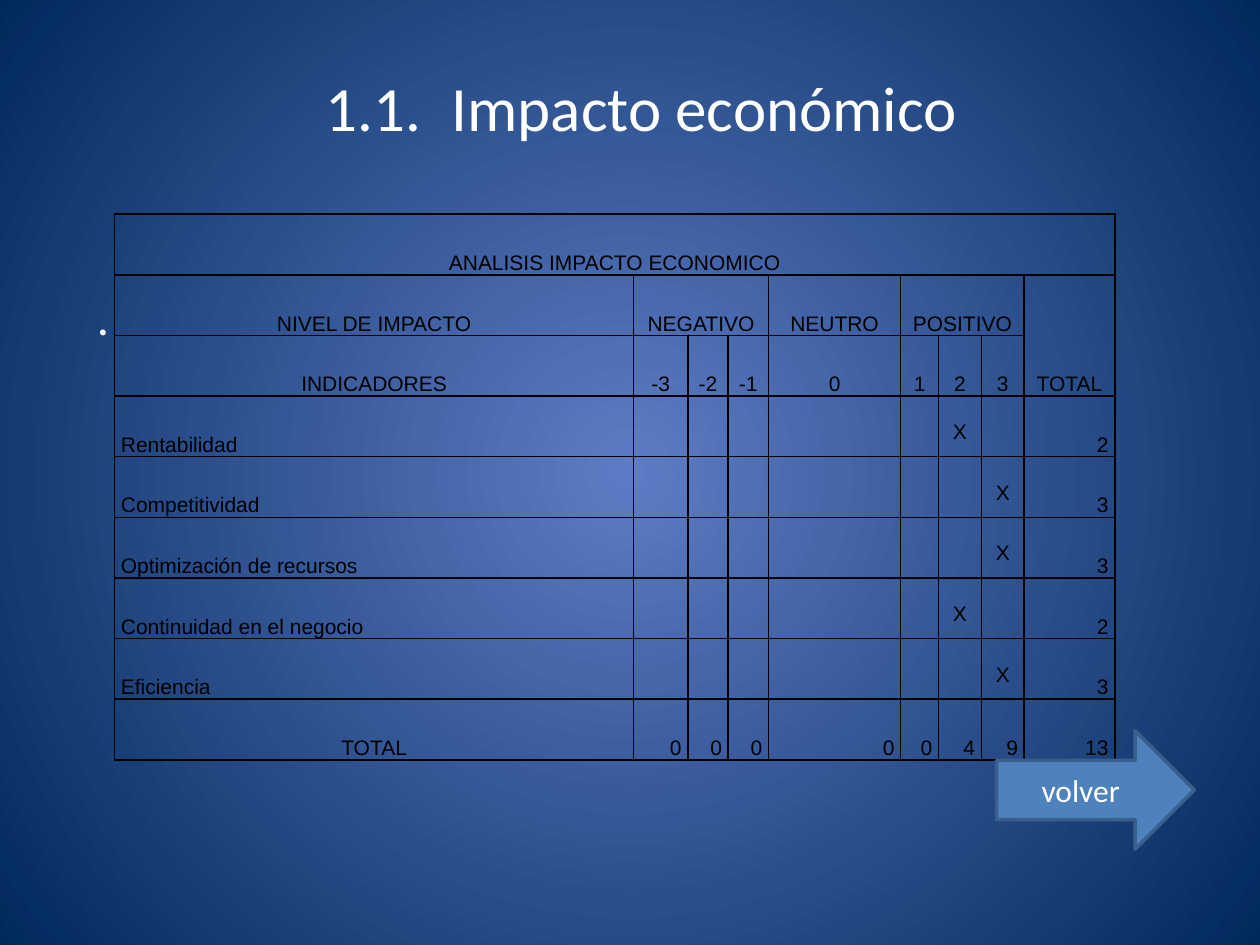
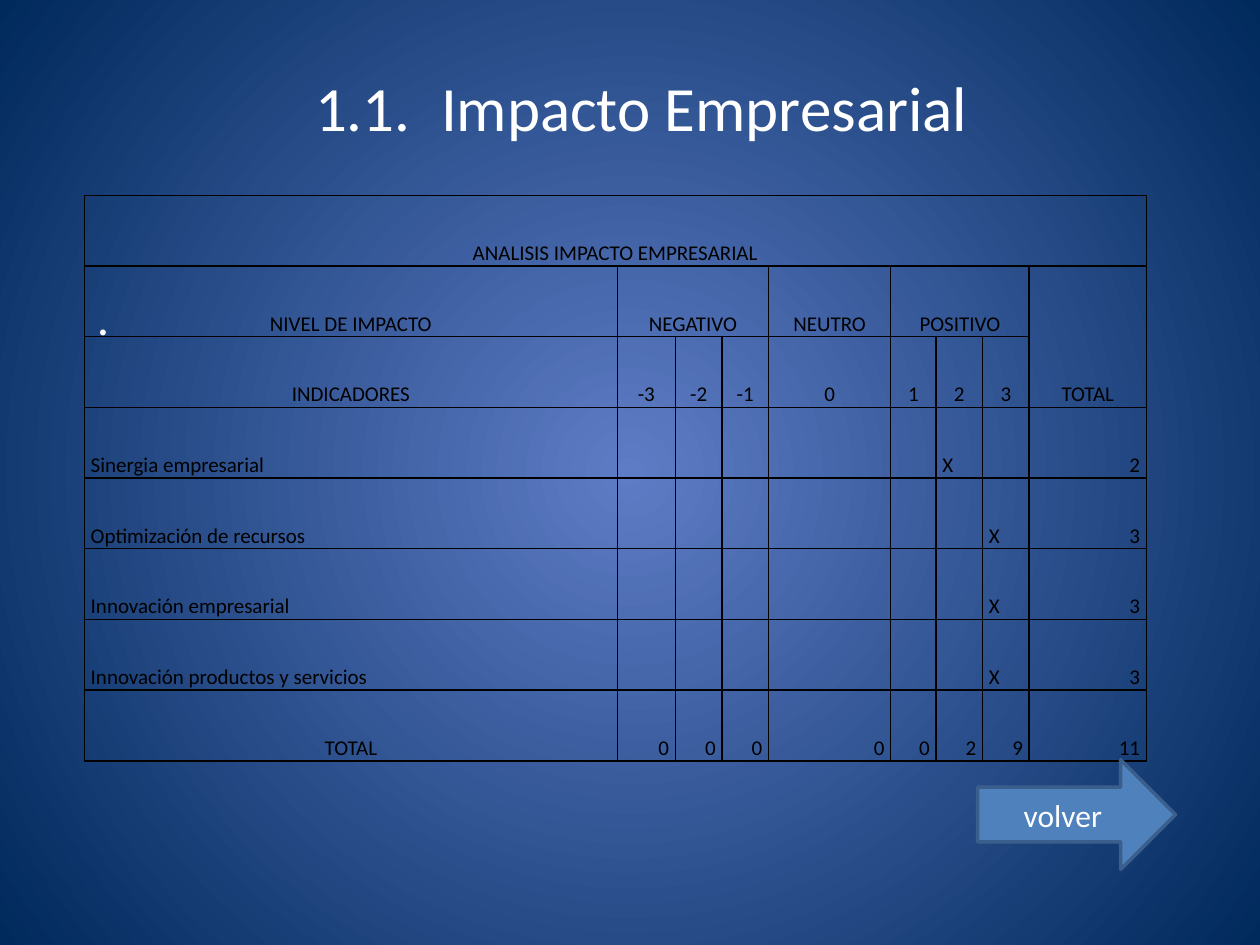
import pptx
import pptx.util
import pptx.dml.color
import pptx.enum.shapes
import pptx.enum.text
import pptx.oxml
import pptx.oxml.ns

Inches = pptx.util.Inches
Pt = pptx.util.Pt
RGBColor = pptx.dml.color.RGBColor
ALIGN = pptx.enum.text.PP_ALIGN
ANCHOR = pptx.enum.text.MSO_ANCHOR
qn = pptx.oxml.ns.qn
NS = pptx.oxml.ns.nsdecls("a")

WHITE = RGBColor(0xFF, 0xFF, 0xFF)
BLACK = RGBColor(0, 0, 0)
GLOW = RGBColor(0x5E, 0x7C, 0xC5)
NAVY = RGBColor(0x00, 0x29, 0x5C)
BLUE = RGBColor(0x4F, 0x81, 0xBD)
EDGE = RGBColor(0x3A, 0x5F, 0x8C)
LEVELS = [-3, -2, -1, 0, 1, 2, 3]


def write(frame, text, size, font, color, align):
    par = frame.paragraphs[0]
    par.text = text
    par.alignment = align
    par.font.size = Pt(size)
    par.font.name = font
    par.font.color.rgb = color
    return par


def style(cell, text, font, align, anchor):
    cell.margin_left = cell.margin_right = Inches(0.05)
    cell.margin_top = cell.margin_bottom = 0
    cell.vertical_anchor = anchor
    cell.fill.background()
    par = write(cell.text_frame, text, 12, font, BLACK, align)
    par.line_spacing = 1.5
    par.space_before = Pt(6)
    props = cell._tc.get_or_add_tcPr()
    for spot, side in enumerate(("lnL", "lnR", "lnT", "lnB")):
        props.insert(spot, pptx.oxml.parse_xml(
            f'<a:{side} {NS} w="12700"><a:solidFill>'
            f'<a:srgbClr val="{BLACK}"/></a:solidFill></a:{side}>'))


slides = [
    dict(title="1.1.\tImpacto económico", head="ANALISIS IMPACTO ECONOMICO",
         font="Arial", mark=(ALIGN.CENTER, ANCHOR.MIDDLE),
         table=(0.91, 1.7, 7.95, 4.33), arrow=(7.91, 5.8, 1.57, 0.94),
         cols=[4.12, 0.43, 0.32, 0.32, 1.05, 0.3, 0.34, 0.34, 0.72],
         scores=[("Rentabilidad", 2), ("Competitividad", 3),
                 ("Optimización de recursos", 3),
                 ("Continuidad en el negocio", 2), ("Eficiencia", 3)]),
    dict(title="1.1.\tImpacto Empresarial", head="ANALISIS IMPACTO EMPRESARIAL",
         font="Calibri", mark=(ALIGN.JUSTIFY, ANCHOR.BOTTOM),
         table=(0.67, 1.55, 8.43, 4.49), arrow=(7.76, 6.03, 1.57, 0.87),
         cols=[4.23, 0.46, 0.37, 0.37, 0.97, 0.36, 0.37, 0.37, 0.93],
         scores=[("Sinergia empresarial", 2), ("Optimización de recursos", 3),
                 ("Innovación empresarial", 3),
                 ("Innovación productos y servicios", 3)]),
]

prs = pptx.Presentation()
prs.slide_width = Inches(10)
prs.slide_height = Inches(7.5)

master = prs.slide_master
fill = master.background.fill
fill.gradient()
for stop, color, place in zip(fill.gradient_stops, (GLOW, NAVY), (0, 1)):
    stop.color.rgb = color
    stop.position = place
grad = master.element.find(".//" + qn("a:gradFill"))
grad.replace(grad.find(qn("a:lin")), pptx.oxml.parse_xml(
    f'<a:path {NS} path="circle">'
    '<a:fillToRect l="50000" t="50000" r="50000" b="50000"/></a:path>'))

for data in slides:
    slide = prs.slides.add_slide(prs.slide_layouts[5])
    title = slide.shapes.title
    title.left, title.top, title.width, title.height = map(Inches, (0.59, 0.45, 9, 0.78))
    write(title.text_frame, data["title"], 36, "Calibri", WHITE, ALIGN.CENTER)

    note = slide.shapes.add_textbox(*map(Inches, (0.67, 1.28, 8.66, 1.51))).text_frame
    note.word_wrap = True
    note.vertical_anchor = ANCHOR.BOTTOM
    write(note, ".", 28, "Calibri", WHITE, ALIGN.JUSTIFY)

    scores = data["scores"]
    sums = [level * sum(score == level for _, score in scores) for level in LEVELS]
    rows = [[data["head"]] + [""] * 8,
            ["NIVEL DE IMPACTO", "NEGATIVO", "", "", "NEUTRO", "POSITIVO", "", "", "TOTAL"],
            ["INDICADORES", *LEVELS, ""]]
    for label, score in scores:
        rows.append([label, *("X" if score == level else "" for level in LEVELS), score])
    rows.append(["TOTAL", *sums, sum(sums)])

    count = len(rows)
    table = slide.shapes.add_table(count, 9, *map(Inches, data["table"])).table
    table.first_row = table.horz_banding = False
    for col, width in zip(table.columns, data["cols"]):
        col.width = Inches(width)
    for row in table.rows:
        row.height = Inches(data["table"][3] / count)
    for r, row in enumerate(rows):
        for c, value in enumerate(row):
            align, anchor = ALIGN.CENTER, ANCHOR.BOTTOM
            if value == "X":
                align, anchor = data["mark"]
            elif 3 <= r < count - 1 and c == 0:
                align = ALIGN.JUSTIFY
            elif r >= 3 and c > 0:
                align = ALIGN.RIGHT
            style(table.cell(r, c), str(value), data["font"], align, anchor)
    for top, left, low, right in ((0, 0, 0, 8), (1, 1, 1, 3), (1, 5, 1, 7), (1, 8, 2, 8)):
        table.cell(top, left).merge(table.cell(low, right))

    arrow = slide.shapes.add_shape(
        pptx.enum.shapes.MSO_SHAPE.RIGHT_ARROW, *map(Inches, data["arrow"]))
    arrow.shadow.inherit = False
    arrow.fill.solid()
    arrow.fill.fore_color.rgb = BLUE
    arrow.line.color.rgb = EDGE
    arrow.line.width = Pt(2)
    arrow.text_frame.vertical_anchor = ANCHOR.MIDDLE
    write(arrow.text_frame, "volver", 18, "Calibri", WHITE, ALIGN.CENTER)

prs.save("out.pptx")
